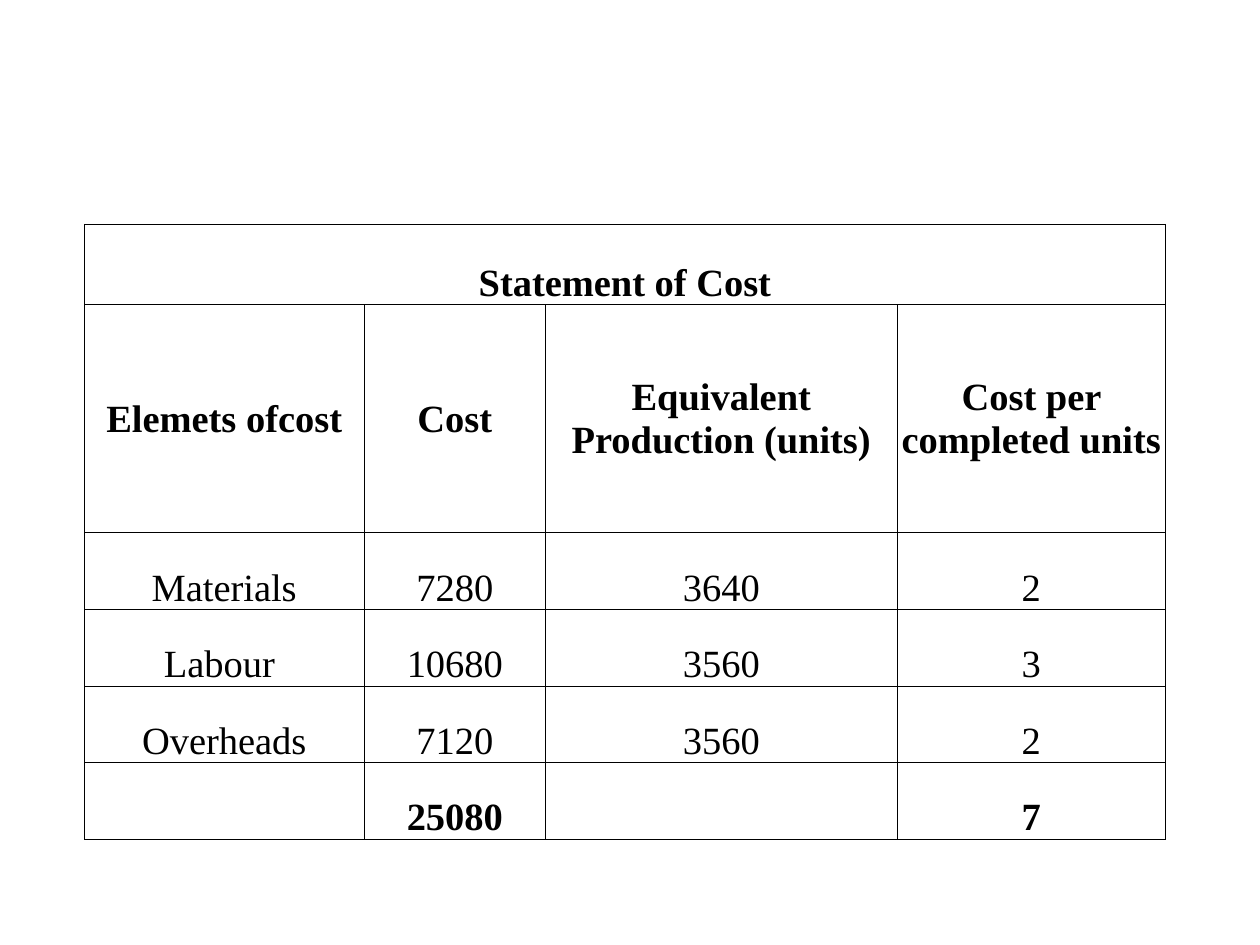
from lxml.etree import SubElement
from pptx import Presentation
from pptx.dml.color import RGBColor
from pptx.enum.text import MSO_ANCHOR as Anchor, PP_ALIGN as Align
from pptx.oxml.ns import qn
from pptx.util import Inches, Pt

BLACK = RGBColor(0, 0, 0)
WHITE = RGBColor(255, 255, 255)
FONT = "Times New Roman"

TITLE = "Statement of Cost"
HEADINGS = ["Elemets ofcost", "Cost", "Equivalent Production (units)",
            "Cost per completed units"]
COSTS = [
    ["Materials", "7280", "3640", "2"],
    ["Labour ", "10680", "3560", "3"],
    ["Overheads", "7120", "3560", "2"],
]
TOTALS = ["", "25080", "", "7"]

COLUMN_WIDTHS = [2.22, 1.44, 2.79, 2.13]
ROW_HEIGHTS = [0.64, 1.82] + [0.61] * 4


def add_borders(cell, color=BLACK, width=Pt(0.5)):
    properties = cell._tc.get_or_add_tcPr()
    for side in ("a:lnL", "a:lnR", "a:lnT", "a:lnB"):
        line = SubElement(properties, qn(side), w=str(int(width)))
        fill = SubElement(line, qn("a:solidFill"))
        SubElement(fill, qn("a:srgbClr"), val=str(color))


def write_text(cell, text, *, bold=False, anchor=Anchor.BOTTOM, size=22):
    cell.margin_left = cell.margin_right = cell.margin_top = Inches(0.01)
    cell.margin_bottom = 0
    cell.vertical_anchor = anchor
    paragraph = cell.text_frame.paragraphs[0]
    paragraph.alignment = Align.CENTER
    paragraph.font.size = Pt(size)
    if text:
        run = paragraph.add_run()
        run.text = text
        run.font.name = FONT
        run.font.size = Pt(size)
        run.font.bold = bold
        run.font.color.rgb = BLACK


def add_cost_statement(slide, left, top, width, height):
    statement = slide.shapes.add_table(
        len(ROW_HEIGHTS), len(COLUMN_WIDTHS), left, top, width, height).table
    statement.first_row = statement.horz_banding = False
    for column, share in zip(statement.columns, COLUMN_WIDTHS):
        column.width = int(width * share / sum(COLUMN_WIDTHS))
    for row, share in zip(statement.rows, ROW_HEIGHTS):
        row.height = int(height * share / sum(ROW_HEIGHTS))

    for cell in statement.iter_cells():
        add_borders(cell)
        cell.fill.solid()
        cell.fill.fore_color.rgb = WHITE

    title = statement.cell(0, 0)
    title.merge(statement.cell(0, len(COLUMN_WIDTHS) - 1))
    write_text(title, TITLE, bold=True)

    for r, texts in enumerate([HEADINGS, *COSTS, TOTALS], start=1):
        for c, text in enumerate(texts):
            write_text(statement.cell(r, c), text,
                       bold=texts in (HEADINGS, TOTALS),
                       anchor=Anchor.MIDDLE if texts is HEADINGS else Anchor.BOTTOM)


def main():
    deck = Presentation()
    deck.slide_width, deck.slide_height = Inches(10), Inches(7.5)
    slide = deck.slides.add_slide(deck.slide_layouts[6])
    add_cost_statement(slide, Inches(0.67), Inches(1.78), Inches(8.58), Inches(4.88))
    deck.save("out.pptx")


if __name__ == "__main__":
    main()
